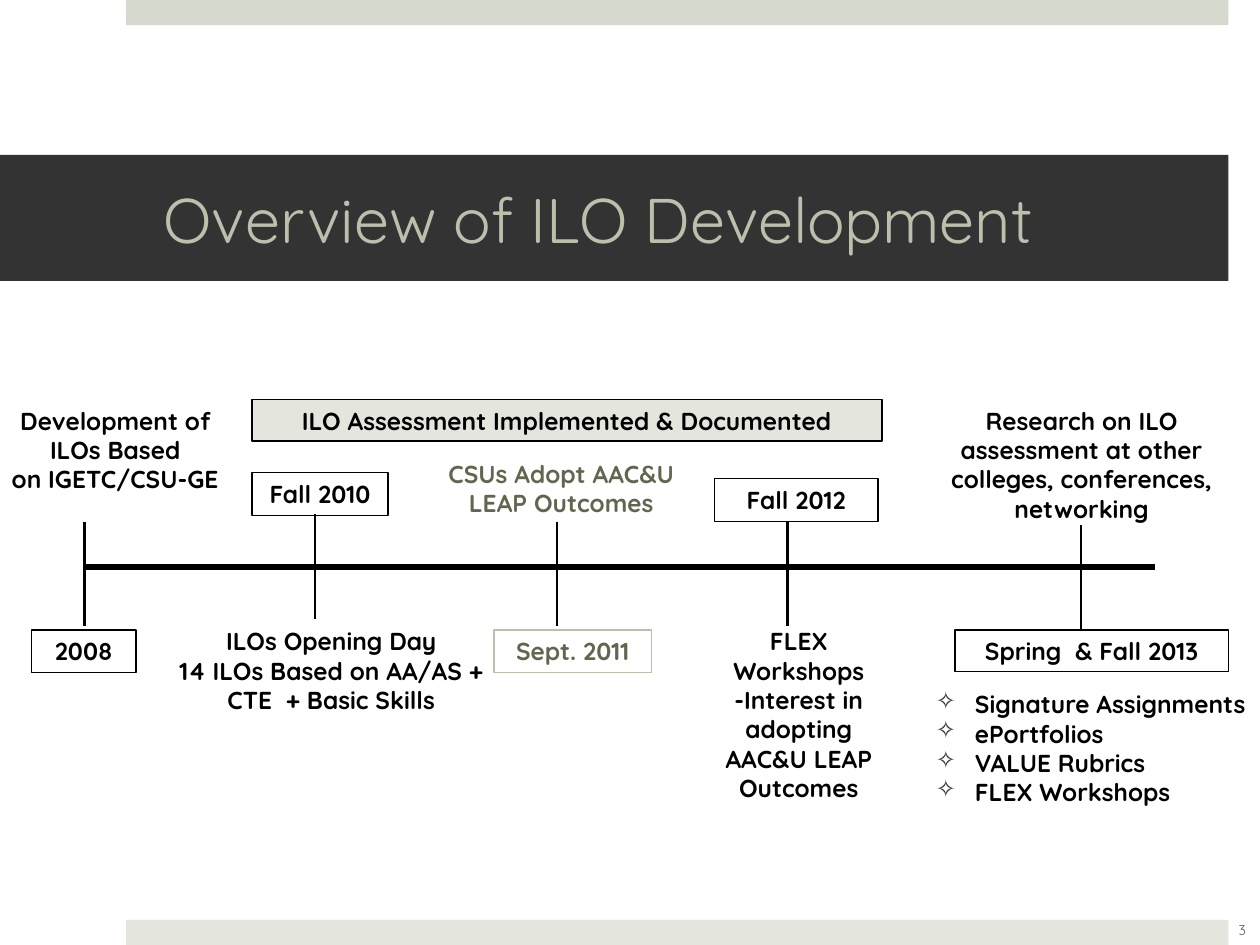
import dataclasses

import pptx
import pptx.dml.color
import pptx.enum.shapes
import pptx.enum.text
import pptx.oxml.ns
import pptx.util
from lxml import etree
from pptx.util import Inches

ALIGN = pptx.enum.text.PP_ALIGN
ANCHOR = pptx.enum.text.MSO_ANCHOR


@dataclasses.dataclass(frozen=True)
class Theme:
    """Colours, type sizes and line widths of the slide."""
    font: str = "Quicksand"
    black: str = "000000"
    dark: str = "333333"
    gray: str = "595959"
    olive: str = "61674F"
    sage: str = "BBC0AC"
    band: str = "D6D9CD"
    pale: str = "E4E6DE"
    title: float = 36
    body: float = 14
    number: float = 8
    axis: float = 3
    tick: float = 1.5
    border: float = 0.75


THEME = Theme()


def color(value):
    """Turn a hex string into a colour."""
    return pptx.dml.color.RGBColor.from_string(value)


def apply_format(target, values):
    """Set each attribute named in a dict of format values."""
    for name, value in values.items():
        setattr(target, name, value)


def style_paragraph(para, size, ink, bold, align):
    """Give one paragraph its alignment and font."""
    para.alignment = align
    apply_format(para.font, {"name": THEME.font, "size": pptx.util.Pt(size), "bold": bold})
    para.font.color.rgb = color(ink)
    for span in para.runs:
        apply_format(span.font, {"name": THEME.font, "size": pptx.util.Pt(size), "bold": bold})
        span.font.color.rgb = color(ink)


def add_bullet(para):
    """Put a star bullet with a hanging indent on a paragraph."""
    properties = para._p.get_or_add_pPr()
    indent = Inches(0.31)
    properties.set("marL", str(indent))
    properties.set("indent", str(-indent))
    qualified = pptx.oxml.ns.qn
    ink = etree.SubElement(properties, qualified("a:buClr"))
    etree.SubElement(ink, qualified("a:srgbClr"), val=THEME.dark)
    etree.SubElement(properties, qualified("a:buSzPct"), val="98000")
    etree.SubElement(properties, qualified("a:buChar"), char="✧")


def write(box, paragraphs, size=THEME.body, ink=THEME.black, bold=True,
          align=ALIGN.CENTER, anchor=ANCHOR.TOP, bullets=False):
    """Fill a box with styled paragraphs."""
    frame = box.text_frame
    apply_format(frame, {"word_wrap": True, "vertical_anchor": anchor})
    for index, text in enumerate(paragraphs):
        para = frame.paragraphs[0] if index == 0 else frame.add_paragraph()
        para.text = text
        if bullets:
            add_bullet(para)
        style_paragraph(para, size, ink, bold, align)


def add_panel(page, place, fill=None, line=None):
    """Add a rectangle with an optional fill and border."""
    panel = page.shapes.add_shape(
        pptx.enum.shapes.MSO_SHAPE.RECTANGLE, *map(Inches, place))
    panel.shadow.inherit = False
    if fill:
        panel.fill.solid()
        panel.fill.fore_color.rgb = color(fill)
    else:
        panel.fill.background()
    if line:
        panel.line.color.rgb = color(line)
        panel.line.width = pptx.util.Pt(THEME.border)
    else:
        panel.line.fill.background()
    return panel


def add_text(page, place, paragraphs, **style):
    """Add a text box."""
    write(page.shapes.add_textbox(*map(Inches, place)), paragraphs, **style)


def add_line(page, start, end, width):
    """Add a straight black line."""
    line = page.shapes.add_connector(
        pptx.enum.shapes.MSO_CONNECTOR.STRAIGHT, *map(Inches, start + end))
    line.line.color.rgb = color(THEME.black)
    line.line.width = pptx.util.Pt(width)
    etree.SubElement(line._element.spPr, pptx.oxml.ns.qn("a:effectLst"))


def add_frame(page):
    """Add the edge bands, the title and the slide number."""
    for top, fill in ((0, THEME.band), (7.3, THEME.pale)):
        add_panel(page, (1, top, 8.75, 0.2), fill)
    title = add_panel(page, (0, 1.23, 9.75, 1), THEME.dark)
    apply_format(title.text_frame, {"margin_left": Inches(1.3), "margin_right": Inches(0.3)})
    write(title, ["Overview of ILO Development"], size=THEME.title, ink=THEME.sage,
          bold=False, align=ALIGN.LEFT, anchor=ANCHOR.MIDDLE)
    add_text(page, (9.61, 7.18, 0.5, 0.4), ["3"], size=THEME.number,
             ink=THEME.gray, bold=False, anchor=ANCHOR.MIDDLE)


def add_timeline(page):
    """Add the time axis and its ticks."""
    add_line(page, (0.67, 4.5), (9.17, 4.5), THEME.axis)
    ticks = ((0.67, 4.14), (2.5, 4.08), (4.42, 4.14), (6.25, 4.14), (8.58, 4.17))
    for left, top in ticks:
        add_line(page, (left, top), (left, top + 0.83), THEME.tick)


def add_dates(page):
    """Add the bordered date boxes and the phase banner."""
    black, olive = THEME.black, THEME.olive
    dates = (
        ("2008", (0.25, 5, 0.83, 0.34), None, black, black),
        ("Sept. 2011", (3.92, 5, 1.25, 0.34), None, THEME.sage, olive),
        ("Fall 2012", (5.67, 3.8, 1.3, 0.34), None, black, black),
        ("Fall 2010", (2, 3.75, 1.08, 0.34), None, black, black),
        ("ILO Assessment Implemented & Documented", (2, 3.17, 5, 0.33),
         THEME.pale, black, black),
        ("Spring  & Fall 2013", (7.58, 5, 2.17, 0.33), None, black, black),
    )
    for text, place, fill, line, ink in dates:
        write(add_panel(page, place, fill, line), [text], ink=ink)


def add_events(page):
    """Add the event descriptions around the axis."""
    events = (
        ((-0.5, 3.17, 2.83, 0.81),
         ["Development of", "ILOs Based\non IGETC/CSU-GE"], THEME.black),
        ((3.33, 3.59, 2.25, 0.57), ["CSUs Adopt AAC&U LEAP Outcomes"], THEME.olive),
        ((5.5, 4.92, 1.68, 1.51),
         ["FLEX\nWorkshops -Interest in adopting AAC&U LEAP Outcomes"], THEME.black),
        ((1.17, 4.92, 2.92, 0.81),
         ["ILOs Opening Day\n14 ILOs Based on AA/AS + CTE  + Basic Skills"], THEME.black),
        ((7.25, 3.17, 2.67, 1.04),
         ["Research on ILO assessment at other colleges, conferences, networking"],
         THEME.black),
    )
    for place, paragraphs, ink in events:
        add_text(page, place, paragraphs, ink=ink)
    projects = ["Signature Assignments", "ePortfolios", "VALUE Rubrics", "FLEX Workshops"]
    add_text(page, (7.33, 5.42, 2.67, 1.04), projects, align=ALIGN.LEFT, bullets=True)


def main():
    """Build the slide and save it."""
    deck = pptx.Presentation()
    apply_format(deck, {"slide_width": Inches(10), "slide_height": Inches(7.5)})
    page = deck.slides.add_slide(deck.slide_layouts[6])
    for add_part in (add_frame, add_timeline, add_dates, add_events):
        add_part(page)
    deck.save("out.pptx")


if __name__ == "__main__":
    main()
